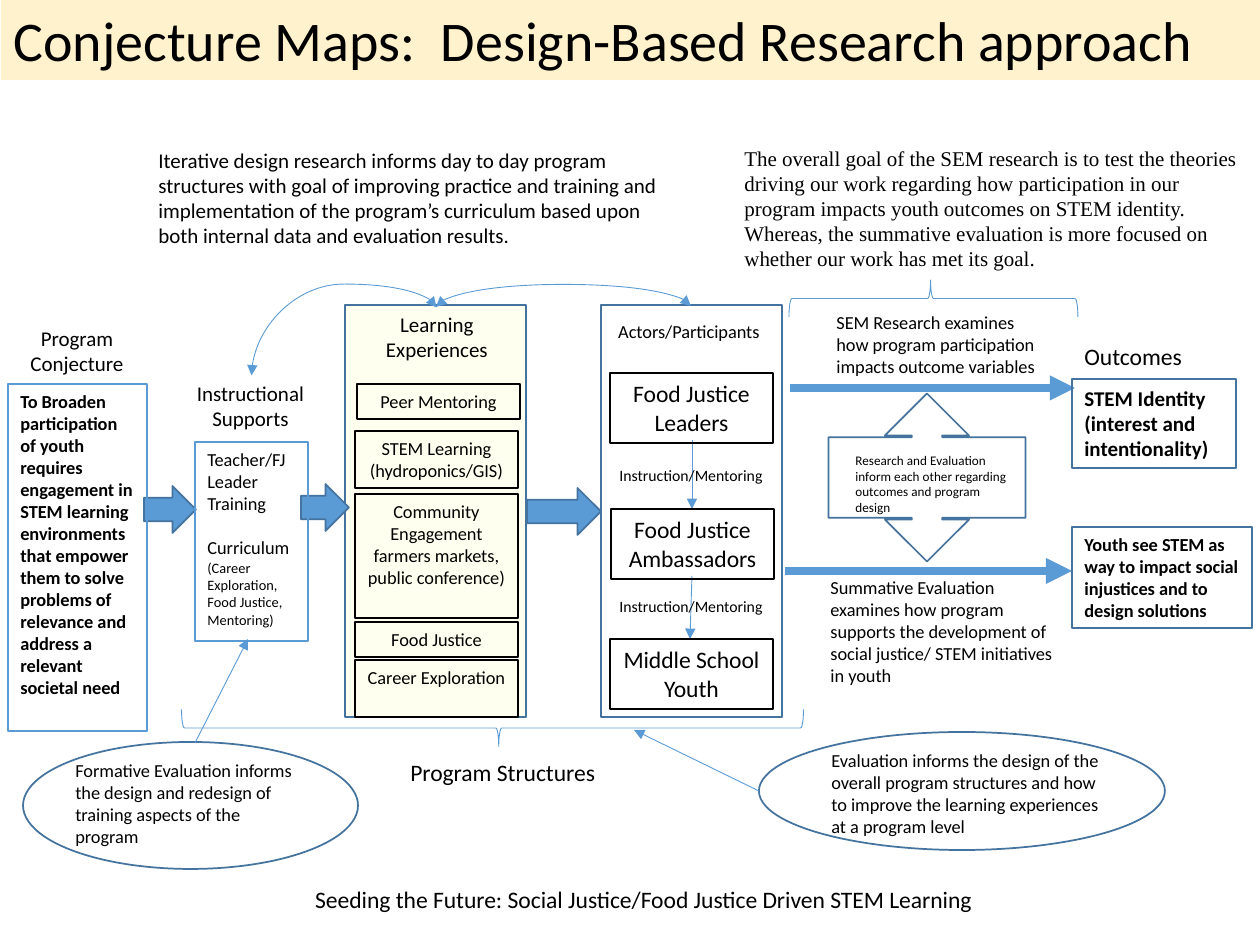
from lxml.etree import SubElement
from pptx import Presentation
from pptx.dml.color import RGBColor
from pptx.enum.shapes import MSO_CONNECTOR, MSO_SHAPE
from pptx.enum.text import MSO_ANCHOR, MSO_AUTO_SIZE, PP_ALIGN
from pptx.oxml.ns import qn
from pptx.util import Emu, Pt

SCALE = 914400 / 126


def px(*lengths):
    return [Emu(round(length * SCALE)) for length in lengths]


def color(value):
    return RGBColor.from_string(value)


BLACK, BLUE, NAVY = "000000", "5B9BD5", "43739E"
LEFT, CENTER = PP_ALIGN.LEFT, PP_ALIGN.CENTER

deck = Presentation()
deck.slide_width, deck.slide_height = px(1260, 945)
page = deck.slides.add_slide(deck.slide_layouts[5])

title = page.shapes.title
title.left, title.top, title.width, title.height = px(1, -1, 1266, 81)
title.fill.solid()
title.fill.fore_color.rgb = color("FFF2CC")
title.text_frame.auto_size = MSO_AUTO_SIZE.NONE
title.text_frame.vertical_anchor = MSO_ANCHOR.TOP
para = title.text_frame.paragraphs[0]
para.alignment = LEFT
span = para.add_run()
span.text = "Conjecture Maps:  Design-Based Research approach"
span.font.size = Pt(32)
span.font.name = "Calibri"
span.font.color.rgb = color(BLACK)

shapes = [
    (MSO_SHAPE.RECTANGLE, (345, 305, 181, 412), "FFFFCC", NAVY, 1, 0, []),
    (MSO_SHAPE.RECTANGLE, (601, 305, 181, 412), None, NAVY, 1, 0, []),
    (MSO_SHAPE.LEFT_RIGHT_ARROW_CALLOUT, (843, 379, 168, 197), None, NAVY, 1, 270,
     [0.18, 0.25, 0.25, 0.48]),
    (MSO_SHAPE.RIGHT_ARROW, (144, 486, 52, 47), BLUE, NAVY, 1, 0, []),
    (MSO_SHAPE.RIGHT_ARROW, (301, 484, 48, 47), BLUE, NAVY, 1, 0, []),
    (MSO_SHAPE.RIGHT_ARROW, (527, 488, 74, 47), BLUE, NAVY, 1, 0, []),
    (MSO_SHAPE.RIGHT_BRACE, (474, 417, 37, 622), None, BLUE, 0.5, 90, [0.08, 0.49]),
    (MSO_SHAPE.RIGHT_BRACE, (915, 154, 37, 289), None, BLUE, 0.5, 270, [0.08, 0.49]),
    (MSO_SHAPE.OVAL, (759, 732, 406, 118), None, NAVY, 1, 0, []),
    (MSO_SHAPE.OVAL, (23, 742, 335, 127), None, NAVY, 1, 0, []),
]
for kind, place, fill, line, weight, turn, adjustments in shapes:
    shape = page.shapes.add_shape(kind, *px(*place))
    shape.shadow.inherit = False
    shape.rotation = turn
    for index, value in enumerate(adjustments):
        shape.adjustments[index] = value
    if fill:
        shape.fill.solid()
        shape.fill.fore_color.rgb = color(fill)
    else:
        shape.fill.background()
    shape.line.color.rgb = color(line)
    shape.line.width = Pt(weight)

panel = page.shapes[1]
tint = panel._element.spPr.find(qn("a:solidFill")).find(qn("a:srgbClr"))
SubElement(tint, qn("a:alpha"), val="30000")

connectors = [
    (MSO_CONNECTOR.STRAIGHT, (785, 571, 1072, 571), 5, None),
    (MSO_CONNECTOR.STRAIGHT, (790, 388, 1075, 388), 4.75, None),
    (MSO_CONNECTOR.STRAIGHT, (692, 440, 692, 509), 0.5, None),
    (MSO_CONNECTOR.STRAIGHT, (692, 576, 690, 639), 0.5, None),
    (MSO_CONNECTOR.STRAIGHT, (759, 791, 634, 730), 0.5, None),
    (MSO_CONNECTOR.STRAIGHT, (195, 743, 248, 639), 0.5, None),
    (MSO_CONNECTOR.CURVE, (564, 434, 563, 179), 0.5, 2270000),
    (MSO_CONNECTOR.CURVE, (378, 434, 310, 249), 0.5, 134500),
]
for kind, ends, weight, bend in connectors:
    connector = page.shapes.add_connector(kind, *px(*ends))
    connector.line.color.rgb = color(BLUE)
    connector.line.width = Pt(weight)
    properties = connector._element.spPr
    outline = properties.find(qn("a:ln"))
    if bend:
        properties.find(qn("a:xfrm")).set("rot", "5400000")
        guides = properties.find(qn("a:prstGeom")).find(qn("a:avLst"))
        SubElement(guides, qn("a:gd"), name="adj1", fmla=f"val {bend}")
        SubElement(outline, qn("a:headEnd"), type="triangle")
    SubElement(outline, qn("a:tailEnd"), type="triangle")
    SubElement(properties, qn("a:effectLst"))

boxes = [
    ((349, 305, 176, 63), "Learning Experiences", 12, CENTER, None),
    ((357, 384, 163, 35), "Peer Mentoring", 10.5, CENTER, BLACK),
    ((355, 431, 163, 57), "STEM Learning (hydroponics/GIS)", 10.5, CENTER, BLACK),
    ((355, 494, 163, 124), "Community Engagement farmers markets, public conference)",
     10.5, CENTER, BLACK),
    ((355, 622, 163, 35), "Food Justice", 10.5, CENTER, BLACK),
    ((355, 660, 163, 57), "Career Exploration", 10.5, CENTER, BLACK),
    ((601, 314, 176, 35), "Actors/Participants", 10.5, CENTER, None),
    ((610, 373, 163, 70), "Food Justice Leaders", 13.5, CENTER, BLACK),
    ((611, 509, 163, 70), "Food Justice Ambassadors", 13.5, CENTER, BLACK),
    ((610, 639, 163, 70), "Middle School Youth", 13.5, CENTER, BLACK),
    ((607, 460, 183, 32), "Instruction/Mentoring", 9, LEFT, None),
    ((607, 591, 183, 32), "Instruction/Mentoring", 9, LEFT, None),
    ((16, 319, 122, 63), "Program Conjecture", 12, CENTER, None),
    ((180, 374, 141, 63), "Instructional Supports", 12, CENTER, None),
    ((1072, 336, 135, 42), "Outcomes", 13.5, LEFT, None),
    ((398, 752, 213, 42), "Program Structures", 13.5, LEFT, None),
    ((241, 879, 805, 42),
     "Seeding the Future: Social Justice/Food Justice Driven STEM Learning",
     13.5, CENTER, None),
    ((146, 141, 537, 115),
     "Iterative design research informs day to day program structures with goal of "
     "improving practice and training and implementation of the program’s curriculum "
     "based upon both internal data and evaluation results.", 12, LEFT, None),
    ((732, 139, 522, 140),
     "The overall goal of the SEM research is to test the theories driving our work "
     "regarding how participation in our program impacts youth outcomes on STEM "
     "identity. Whereas, the summative evaluation is more focused on whether our work "
     "has met its goal.", 12, LEFT, None),
    ((824, 305, 234, 79),
     "SEM Research examines how program participation impacts outcome variables",
     10.5, LEFT, None),
    ((818, 570, 260, 123),
     "Summative Evaluation examines how program supports the development of social "
     "justice/ STEM initiatives in youth", 10.5, LEFT, None),
    ((843, 446, 186, 77),
     "Research and Evaluation inform each other regarding outcomes and program design",
     7.5, LEFT, None),
    ((819, 743, 296, 102),
     "Evaluation informs the design of the overall program structures and how to "
     "improve the learning experiences at a program level", 10.5, LEFT, None),
    ((63, 753, 253, 102),
     "Formative Evaluation informs the design and redesign of training aspects of the "
     "program", 10.5, LEFT, None),
    ((8, 384, 139, 347),
     "To Broaden participation of youth requires engagement in STEM learning "
     "environments that empower them to solve problems of relevance and address a "
     "relevant societal need", 10.5, LEFT, BLUE),
    ((1072, 379, 164, 89), "STEM Identity (interest and intentionality)", 12, LEFT, NAVY),
    ((1072, 527, 180, 101),
     "Youth see STEM as way to impact social injustices and to design solutions",
     10.5, LEFT, NAVY),
    ((195, 442, 113, 199), "Teacher/FJ Leader Training", 10.5, LEFT, BLUE),
]
bold_starts = ("To Broaden", "STEM Identity", "Youth see")
for place, text, size, alignment, border in boxes:
    box = page.shapes.add_textbox(*px(*place))
    frame = box.text_frame
    frame.word_wrap = text != "Program Structures"
    if border:
        box.line.color.rgb = color(border)
        box.line.width = Pt(0.75)
    paragraphs = [[(text, size)]]
    if text.startswith("Teacher"):
        paragraphs.append([
            ("Curriculum ", 10.5),
            ("(Career Exploration, Food Justice, Mentoring)", 8.25),
        ])
    for index, runs in enumerate(paragraphs):
        para = frame.add_paragraph() if index else frame.paragraphs[0]
        para.alignment = alignment
        if index:
            para.space_before = Pt(12.8)
        for words, points in runs:
            span = para.add_run()
            span.text = words
            span.font.size = Pt(points)
            span.font.name = "Times New Roman" if text.startswith("The overall") else "Calibri"
            span.font.bold = text.startswith(bold_starts)
            span.font.color.rgb = color(BLACK)

deck.save("out.pptx")
